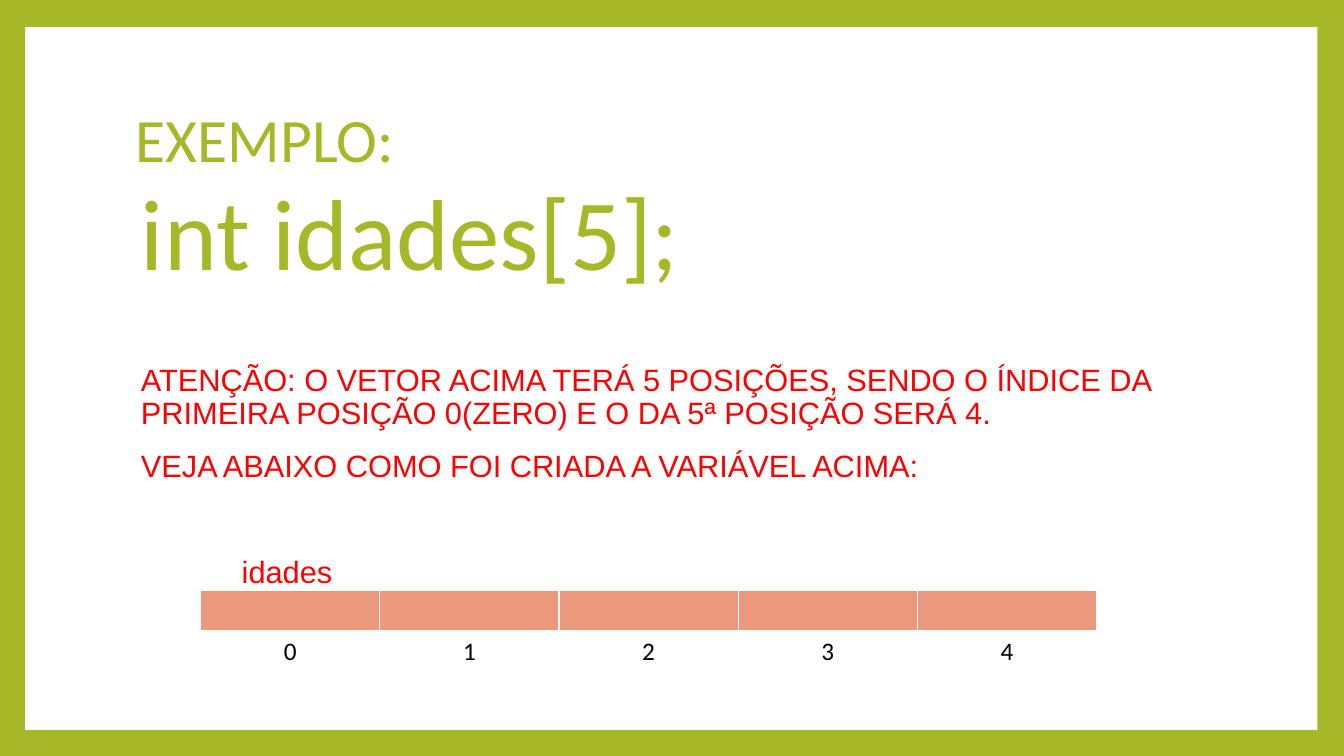
from lxml.etree import SubElement
from pptx import Presentation
from pptx.dml.color import RGBColor
from pptx.enum.shapes import MSO_SHAPE
from pptx.enum.text import MSO_ANCHOR, PP_ALIGN
from pptx.oxml.ns import qn
from pptx.util import Pt

GREEN = "A6B727"
WHITE = "FFFFFF"
RED = "FF0000"
SALMON = "EC987D"
BLACK = "000000"
POSITIONS = 5
COLUMN_WIDTH = 128
ROW_HEIGHT = 29.2


def paint(fill, color):
    fill.solid()
    fill.fore_color.rgb = RGBColor.from_string(color)


def add_run(paragraph, text, size, font, color):
    run = paragraph.add_run()
    run.text = text
    run.font.size = Pt(size)
    run.font.name = font
    run.font.color.rgb = RGBColor.from_string(color)


def add_panel(slide, left, top, width, height):
    shape = slide.shapes.add_shape(
        MSO_SHAPE.RECTANGLE, Pt(left), Pt(top), Pt(width), Pt(height))
    shape.shadow.inherit = False
    paint(shape.fill, WHITE)
    shape.line.fill.background()


def add_text(slide, left, top, width, height, anchor, lines):
    shape = slide.shapes.add_textbox(Pt(left), Pt(top), Pt(width), Pt(height))
    frame = shape.text_frame
    frame.word_wrap = True
    frame.vertical_anchor = anchor
    for number, (text, size, font, color, indent, space_before) in enumerate(lines):
        paragraph = frame.add_paragraph() if number else frame.paragraphs[0]
        paragraph.line_spacing = 0.9
        paragraph.space_before = Pt(space_before)
        properties = paragraph._p.get_or_add_pPr()
        properties.set("marL", str(Pt(indent)))
        properties.set("indent", "0")
        add_run(paragraph, text, size, font, color)


def add_borders(cell, bottom_width):
    properties = cell._tc.get_or_add_tcPr()
    for side, width in (("L", 1), ("R", 1), ("T", 1), ("B", bottom_width)):
        line = SubElement(properties, qn(f"a:ln{side}"), w=str(Pt(width)))
        solid = SubElement(line, qn("a:solidFill"))
        SubElement(solid, qn("a:srgbClr"), val=WHITE)


def add_vector(slide, left, top):
    table = slide.shapes.add_table(
        2, POSITIONS, Pt(left), Pt(top),
        Pt(POSITIONS * COLUMN_WIDTH), Pt(2 * ROW_HEIGHT)).table
    table.first_row = False
    table.horz_banding = False
    for row in table.rows:
        row.height = Pt(ROW_HEIGHT)
    for index in range(POSITIONS):
        table.columns[index].width = Pt(COLUMN_WIDTH)
        box, label = table.cell(0, index), table.cell(1, index)
        add_borders(box, 3)
        paint(box.fill, SALMON)
        add_borders(label, 1)
        label.fill.background()
        paragraph = label.text_frame.paragraphs[0]
        paragraph.alignment = PP_ALIGN.CENTER
        add_run(paragraph, str(index), 18, "Calibri", BLACK)


def main():
    presentation = Presentation()
    presentation.slide_width = Pt(960)
    presentation.slide_height = Pt(540)
    slide = presentation.slides.add_slide(presentation.slide_layouts[6])
    paint(slide.background.fill, GREEN)
    add_panel(slide, 18, 19.4, 923, 502)
    add_text(slide, 90, 48.2, 777.6, 106.6, MSO_ANCHOR.MIDDLE, [
        ("EXEMPLO:", 44, "Calibri", GREEN, 0, 0),
    ])
    add_text(slide, 90, 127.4, 777.6, 384.5, MSO_ANCHOR.TOP, [
        ("int idades[5];", 72, "Calibri", GREEN, 3.6, 0),
        ("ATENÇÃO: O VETOR ACIMA TERÁ 5 POSIÇÕES, SENDO O ÍNDICE DA "
         "PRIMEIRA POSIÇÃO 0(ZERO) E O DA 5ª POSIÇÃO SERÁ 4.",
         22, "Arial", RED, 3.6, 52),
        ("VEJA ABAIXO COMO FOI CRIADA A VARIÁVEL ACIMA:", 22, "Arial", RED, 3.6, 14),
        ("idades", 22, "Arial", RED, 75.6, 52),
    ])
    add_vector(slide, 143.3, 422)
    presentation.save("out.pptx")


if __name__ == "__main__":
    main()
